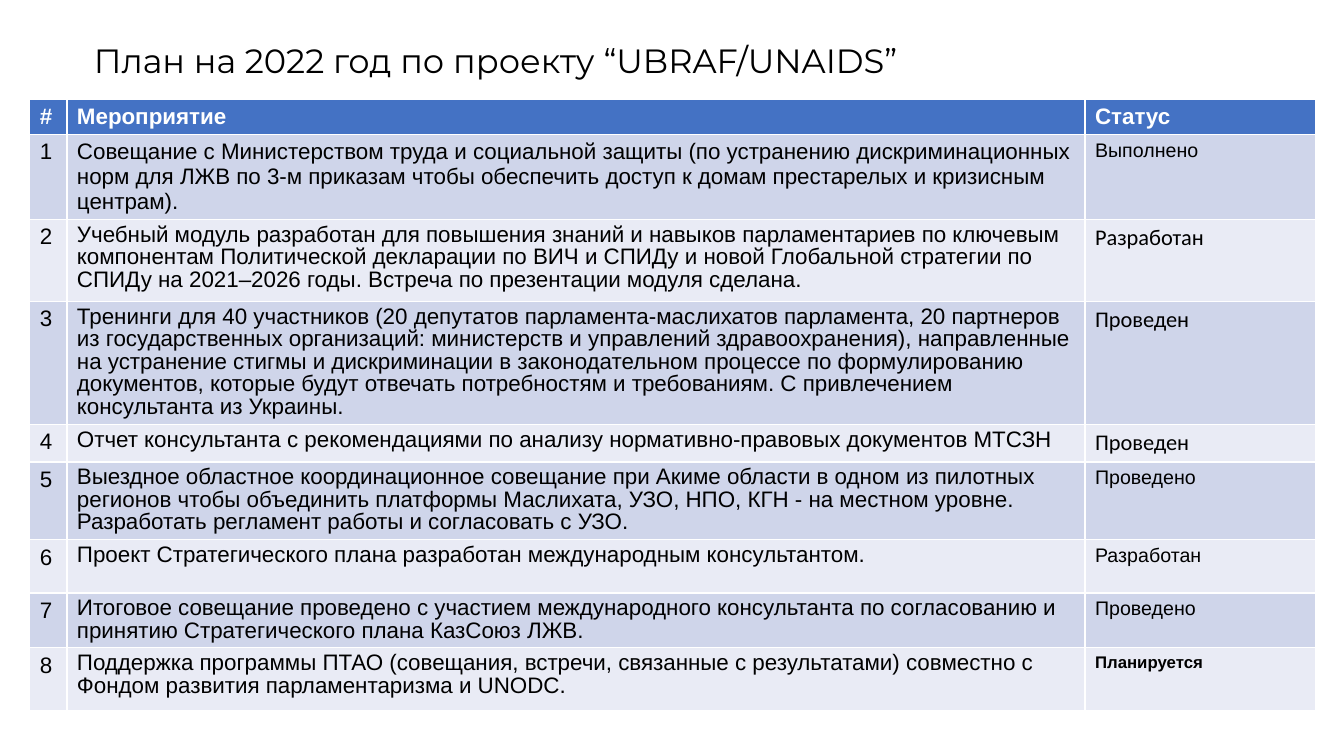
"""Build the 2022 project plan slide: a title above a status table."""
import dataclasses

import pptx
import pptx.dml.color
import pptx.enum.text
import pptx.util

Pt = pptx.util.Pt


@dataclasses.dataclass(frozen=True)
class Theme:
    white: str = "FFFFFF"
    black: str = "000000"
    header: str = "4472C4"
    bands: tuple = ("CFD5EA", "E9EBF5")
    body_font: str = "Arial"
    status_font: str = "Calibri"
    title_font: str = "Montserrat"
    title_size: int = 24
    body_size: int = 16
    status_size: int = 14
    small_size: int = 12


theme = Theme()


def write(frame, text, *, font=theme.body_font, size=theme.body_size,
          color=theme.black, bold=False, line_spacing=None, before=None):
    para = frame.paragraphs[0]
    para.alignment = pptx.enum.text.PP_ALIGN.LEFT
    if line_spacing is not None:
        para.line_spacing = line_spacing
    if before is not None:
        para.space_before = Pt(before)
    span = para.add_run()
    span.text = text
    span.font.name = font
    span.font.size = Pt(size)
    span.font.bold = bold
    span.font.color.rgb = pptx.dml.color.RGBColor.from_string(color)


def fill_cell(cell, color):
    cell.fill.solid()
    cell.fill.fore_color.rgb = pptx.dml.color.RGBColor.from_string(color)


deck = pptx.Presentation()
deck.slide_width, deck.slide_height = Pt(960), Pt(540)
slide = deck.slides.add_slide(deck.slide_layouts[6])

headings = ("#", "Мероприятие", "Статус")
column_widths = (26.6, 727.2, 165)
header_height = 24.5

tight = {"line_spacing": 0.9, "before": 10}
plain_status = {"size": theme.status_size}
calibri_status = {"font": theme.status_font}
planned_status = {"size": theme.small_size, "bold": True}

activities = [
    (46, "Совещание с Министерством труда и социальной защиты (по устранению "
     "дискриминационных норм для ЛЖВ по 3-м приказам чтобы обеспечить доступ к "
     "домам престарелых и кризисным центрам).", {}, "Выполнено", plain_status),
    (58.7, "Учебный модуль разработан для повышения знаний и навыков парламентариев "
     "по ключевым компонентам Политической декларации по ВИЧ и СПИДу и новой "
     "Глобальной стратегии по СПИДу на 2021–2026 годы. Встреча по презентации "
     "модуля сделана.", tight, "Разработан", calibri_status),
    (87.8, "Тренинги для 40 участников (20 депутатов парламента-маслихатов "
     "парламента, 20 партнеров из государственных организаций: министерств и "
     "управлений здравоохранения), направленные на устранение стигмы и "
     "дискриминации в законодательном процессе по формулированию документов, "
     "которые будут отвечать потребностям и требованиям. С привлечением "
     "консультанта из Украины.", tight, "Проведен", calibri_status),
    (24.5, "Отчет консультанта с рекомендациями по анализу нормативно-правовых "
     "документов МТСЗН", tight, "Проведен", calibri_status),
    (55.6, "Выездное областное координационное совещание при Акиме области в одном "
     "из пилотных регионов чтобы объединить платформы Маслихата, УЗО, НПО, КГН "
     "- на местном уровне. Разработать регламент работы и согласовать с УЗО.",
     tight, "Проведено", plain_status),
    (38, "Проект Стратегического плана разработан международным консультантом.",
     tight, "Разработан", plain_status),
    (39, "Итоговое совещание проведено с участием международного консультанта по "
     "согласованию и принятию Стратегического плана КазСоюз ЛЖВ.",
     tight, "Проведено", plain_status),
    (44.5, "Поддержка программы ПТАО (совещания, встречи, связанные с результатами) "
     "совместно с Фондом развития парламентаризма и UNODC.",
     tight, "Планируется", planned_status),
]

table_height = header_height + sum(activity[0] for activity in activities)
table = slide.shapes.add_table(
    len(activities) + 1, len(headings), Pt(21.2), Pt(71.2),
    Pt(sum(column_widths)), Pt(table_height)).table
for column, width in zip(table.columns, column_widths):
    column.width = Pt(width)

table.rows[0].height = Pt(header_height)
for cell, heading in zip(table.rows[0].cells, headings):
    fill_cell(cell, theme.header)
    write(cell.text_frame, heading, color=theme.white, bold=True)

for number, (height, activity, activity_format, status, status_format) in enumerate(
        activities, start=1):
    row = table.rows[number]
    row.height = Pt(height)
    contents = ((str(number), {}), (activity, activity_format), (status, status_format))
    for cell, (text, text_format) in zip(row.cells, contents):
        fill_cell(cell, theme.bands[(number - 1) % 2])
        write(cell.text_frame, text, **text_format)

title_box = slide.shapes.add_textbox(Pt(60), Pt(31), Pt(828), Pt(28))
title_box.text_frame.word_wrap = True
title_box.text_frame.vertical_anchor = pptx.enum.text.MSO_ANCHOR.MIDDLE
write(title_box.text_frame, "План на 2022 год по проекту “UBRAF/UNAIDS”",
      font=theme.title_font, size=theme.title_size, line_spacing=0.9)

deck.save("out.pptx")
